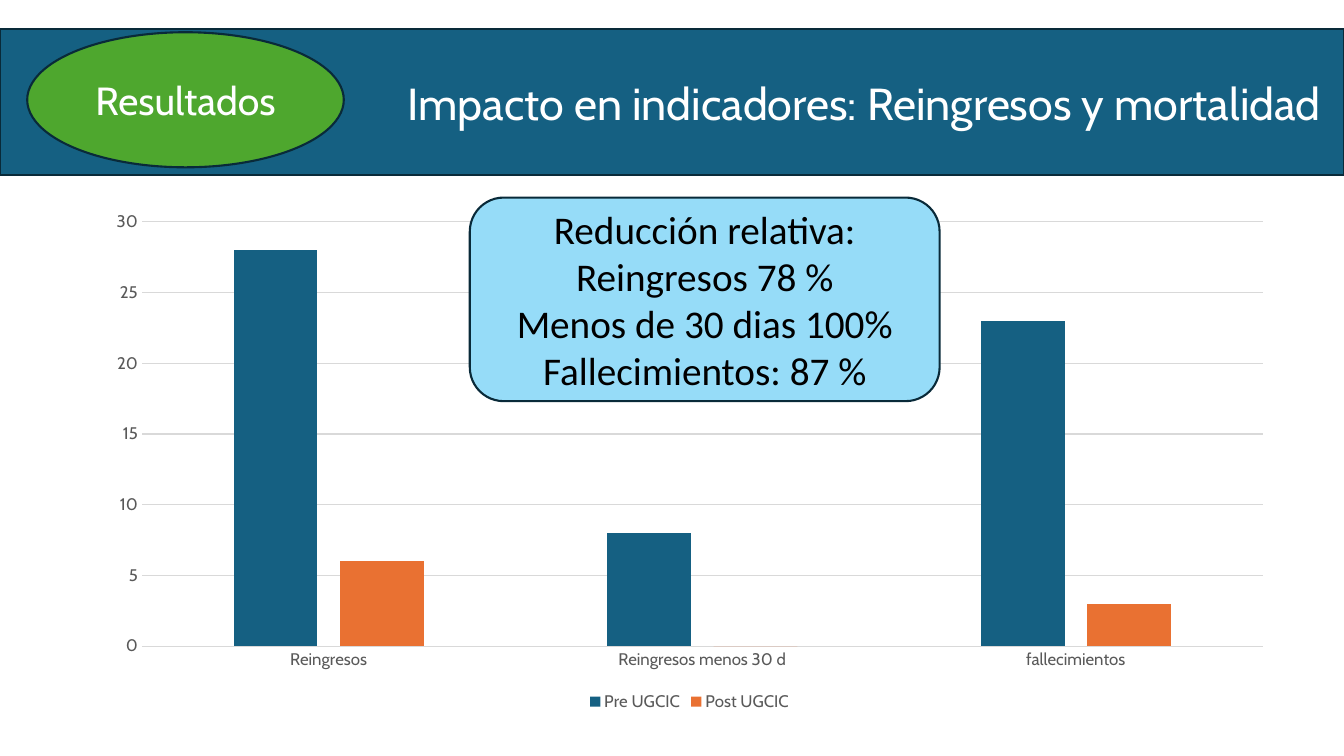
from dataclasses import dataclass

from pptx import Presentation
from pptx.chart.chart import Chart
from pptx.chart.data import CategoryChartData
from pptx.dml.color import RGBColor
from pptx.enum.chart import XL_CHART_TYPE as ChartType
from pptx.enum.chart import XL_LEGEND_POSITION as LegendPosition
from pptx.enum.chart import XL_TICK_MARK as TickMark
from pptx.enum.shapes import MSO_SHAPE as Preset
from pptx.enum.text import MSO_ANCHOR as Anchor
from pptx.enum.text import PP_ALIGN as Align
from pptx.slide import Slide
from pptx.util import Inches, Pt


@dataclass(frozen=True)
class Theme:
    """Colours, fonts and type sizes of the slide."""
    blue: str = "156082"
    orange: str = "E97132"
    green: str = "4EA72E"
    sky: str = "96DCF8"
    outline: str = "092A39"
    white: str = "FFFFFF"
    black: str = "000000"
    label: str = "595959"
    grid: str = "D9D9D9"
    heading_font: str = "Cabin"
    callout_font: str = "Calibri"
    title_size: float = 32
    body_size: float = 28
    label_size: float = 12
    outline_width: float = 1.5
    grid_width: float = 0.75


THEME = Theme()


@dataclass(frozen=True)
class Panel:
    """A filled preset shape with centred or aligned text."""
    preset: Preset
    left: float
    top: float
    width: float
    height: float
    fill: str
    lines: tuple[str, ...]
    size: float = THEME.body_size
    font: str = THEME.heading_font
    color: str = THEME.white
    align: Align = Align.CENTER
    right_inset: float = 0.1


@dataclass(frozen=True)
class Series:
    """One set of columns."""
    name: str
    values: tuple[int, ...]
    color: str


CATEGORIES = ("Reingresos", "Reingresos menos 30 d", "fallecimientos")
SERIES = (
    Series("Pre UGCIC", (28, 8, 23), THEME.blue),
    Series("Post UGCIC", (6, 0, 3), THEME.orange),
)
PANELS = (
    Panel(Preset.RECTANGLE, 0, 0.29, 13.33, 1.45, THEME.blue,
          ("Impacto en indicadores: Reingresos y mortalidad",),
          size=THEME.title_size, align=Align.RIGHT, right_inset=0.22),
    Panel(Preset.OVAL, 0.27, 0.32, 3.14, 1.34, THEME.green, ("Resultados",)),
    Panel(Preset.ROUNDED_RECTANGLE, 4.66, 1.96, 4.66, 2.02, THEME.sky,
          ("Reducción relativa:", "Reingresos 78 %",
           "Menos de 30 dias 100%", "Fallecimientos: 87 %"),
          font=THEME.callout_font, color=THEME.black),
)


def style_font(font, name: str, size: float, color: str) -> None:
    """Set the face, size and colour of a font."""
    font.name = name
    font.size = Pt(size)
    font.color.rgb = RGBColor.from_string(color)


def style_line(line, color: str, width: float) -> None:
    """Set the colour and width of a line."""
    line.color.rgb = RGBColor.from_string(color)
    line.width = Pt(width)


def add_panel(slide: Slide, panel: Panel) -> None:
    """Draw one panel and its text."""
    shape = slide.shapes.add_shape(
        panel.preset, Inches(panel.left), Inches(panel.top),
        Inches(panel.width), Inches(panel.height))
    shape.shadow.inherit = False
    shape.fill.solid()
    shape.fill.fore_color.rgb = RGBColor.from_string(panel.fill)
    style_line(shape.line, THEME.outline, THEME.outline_width)
    text_frame = shape.text_frame
    text_frame.word_wrap = True
    text_frame.vertical_anchor = Anchor.MIDDLE
    text_frame.margin_right = Inches(panel.right_inset)
    text_frame.text = "\n".join(panel.lines)
    for paragraph in text_frame.paragraphs:
        paragraph.alignment = panel.align
        for run in paragraph.runs:
            style_font(run.font, panel.font, panel.size, panel.color)


def style_axes(chart: Chart) -> None:
    """Format both axes and the gridlines."""
    for axis in (chart.category_axis, chart.value_axis):
        axis.major_tick_mark = TickMark.NONE
        axis.minor_tick_mark = TickMark.NONE
        style_font(axis.tick_labels.font, THEME.heading_font,
                   THEME.label_size, THEME.label)
    style_line(chart.category_axis.format.line, THEME.grid, THEME.grid_width)
    value_axis = chart.value_axis
    value_axis.minimum_scale = 0
    value_axis.maximum_scale = 30
    value_axis.major_unit = 5
    value_axis.format.line.fill.background()
    style_line(value_axis.major_gridlines.format.line,
               THEME.grid, THEME.grid_width)


def add_indicator_chart(slide: Slide) -> None:
    """Draw the clustered columns before and after the unit."""
    data = CategoryChartData()
    data.categories = CATEGORIES
    for series in SERIES:
        data.add_series(series.name, series.values)
    chart = slide.shapes.add_chart(
        ChartType.COLUMN_CLUSTERED, Inches(0.92), Inches(2),
        Inches(11.84), Inches(5.1), data).chart
    chart.has_title = False
    style_font(chart.font, THEME.heading_font, THEME.label_size, THEME.label)
    style_axes(chart)
    plot = chart.plots[0]
    plot.gap_width = 219
    plot.overlap = -27
    plot.vary_by_categories = False
    for drawn, series in zip(plot.series, SERIES):
        drawn.format.fill.solid()
        drawn.format.fill.fore_color.rgb = RGBColor.from_string(series.color)
    chart.has_legend = True
    chart.legend.position = LegendPosition.BOTTOM
    chart.legend.include_in_layout = False
    style_font(chart.legend.font, THEME.heading_font,
               THEME.label_size, THEME.label)


def main() -> None:
    """Build and save the presentation."""
    presentation = Presentation()
    presentation.slide_width = Inches(13.33)
    presentation.slide_height = Inches(7.5)
    slide = presentation.slides.add_slide(presentation.slide_layouts[6])
    add_indicator_chart(slide)
    for panel in PANELS:
        add_panel(slide, panel)
    presentation.save("out.pptx")


if __name__ == "__main__":
    main()
